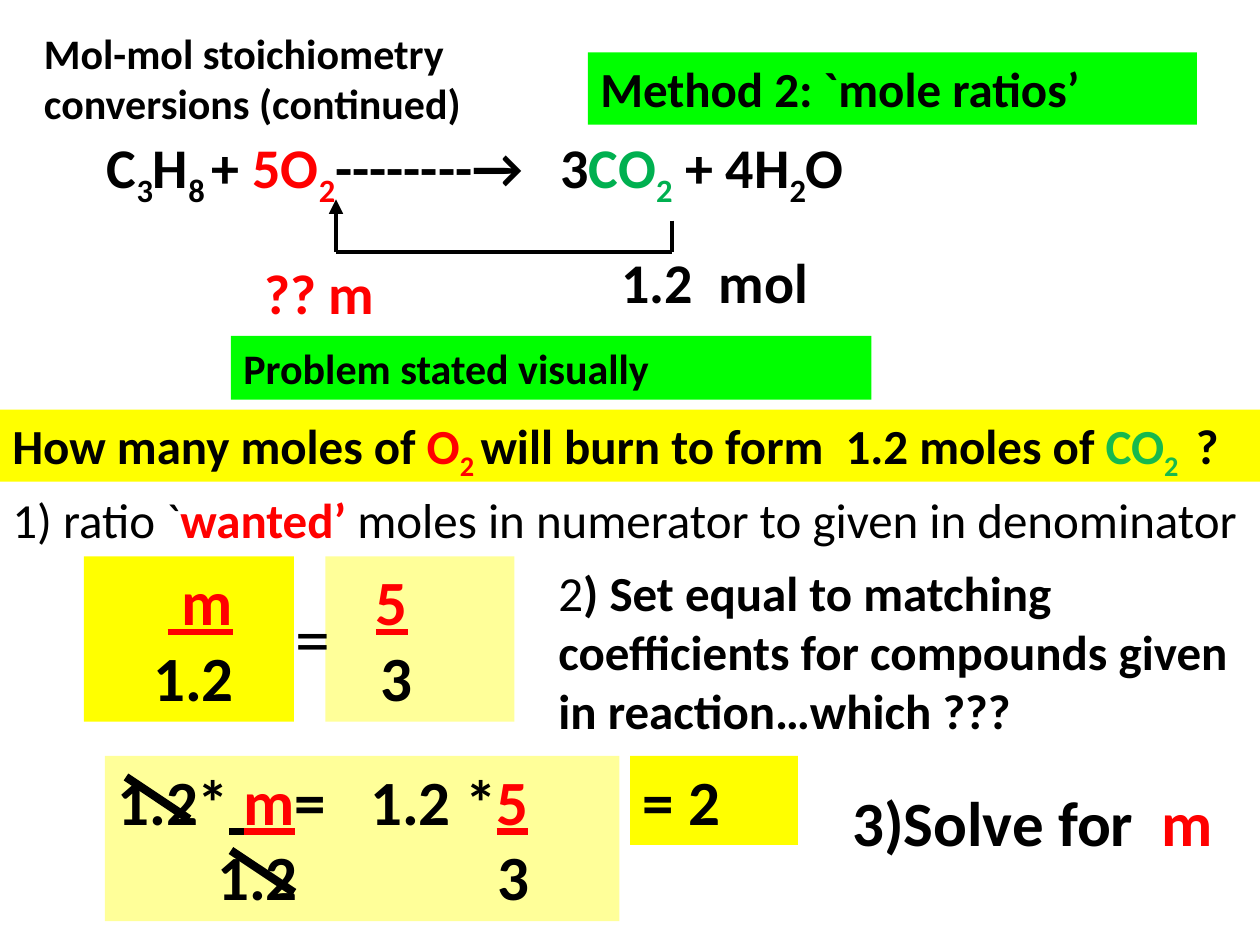
"""Build a slide on solving a mole ratio problem in three steps."""
from lxml.etree import SubElement
from pptx import Presentation
from pptx.dml.color import RGBColor
from pptx.enum.shapes import MSO_CONNECTOR, MSO_SHAPE
from pptx.enum.text import MSO_ANCHOR, PP_ALIGN
from pptx.oxml.ns import qn
from pptx.util import Pt

HUES = {
    "black": "000000", "red": "FF0000", "green": "00B050", "mint": "17B94D",
    "lime": "00FF00", "yellow": "FFFF00", "cream": "FFFF99",
}

deck = Presentation()
deck.slide_width, deck.slide_height = Pt(720), Pt(540)
slide = deck.slides.add_slide(deck.slide_layouts[6])


def add_box(left, top, wide, high, fill, size, *paras):
    """Add a text block; each paragraph is (tab stops, (text, marks), ...)."""
    area = [Pt(n) for n in (left, top, wide, high)]
    if fill:
        box = slide.shapes.add_shape(MSO_SHAPE.RECTANGLE, *area)
        box.shadow.inherit = False
        box.fill.solid()
        box.fill.fore_color.rgb = RGBColor.from_string(HUES[fill])
        box.line.fill.background()
    else:
        box = slide.shapes.add_textbox(*area)
    frame = box.text_frame
    frame.word_wrap = True
    frame.vertical_anchor = MSO_ANCHOR.TOP
    for num, (stops, *runs) in enumerate(paras):
        para = frame.add_paragraph() if num else frame.paragraphs[0]
        para.alignment = PP_ALIGN.LEFT
        if stops:
            tabs = SubElement(para._p.get_or_add_pPr(), qn("a:tabLst"))
            for stop in stops:
                SubElement(tabs, qn("a:tab"), pos=str(Pt(stop)), algn="l")
        for text, marks in runs:
            run = para.add_run()
            run.text = text
            font = run.font
            font.name, font.size = "Calibri", Pt(size)
            marks = marks.split()
            font.bold = "thin" not in marks
            font.underline = "under" in marks
            hue = next((m for m in marks if m in HUES), "black")
            font.color.rgb = RGBColor.from_string(HUES[hue])
            if "sub" in marks:
                font._element.set("baseline", "-25000")


def add_line(start, end, width, head=False):
    """Draw a black line, with an arrowhead at its start if asked."""
    ends = [Pt(n) for n in (*start, *end)]
    line = slide.shapes.add_connector(MSO_CONNECTOR.STRAIGHT, *ends)
    line.line.width = Pt(width)
    line.line.color.rgb = RGBColor.from_string(HUES["black"])
    if head:
        SubElement(line.line._get_or_add_ln(), qn("a:headEnd"), type="triangle")
    SubElement(line._element.spPr, qn("a:effectLst"))


add_box(18, 12, 276, 65.4, None, 24,
        ((), ("Mol-mol stoichiometry conversions (continued)", "")))
add_box(336, 30, 348, 41.2, "lime", 28, ((), ("Method 2: `mole ratios’", "")))
add_box(54, 72, 606, 46, None, 32,
        ((), ("C", ""), ("3", "sub"), ("H", ""), ("8 ", "sub"), ("+ ", ""),
         ("5O", "red"), ("2", "red sub"), ("--------→ \t 3", ""),
         ("CO", "green"), ("2", "green sub"), (" + 4H", ""), ("2", "sub"),
         ("O", "")))
add_box(348, 138, 132, 46, None, 32, ((), ("1.2  mol", "")))
add_box(144, 144, 96, 46, None, 32, ((), ("?? m", "red")))
add_box(132, 192, 366, 36.4, "lime", 24, ((), ("Problem stated visually", "")))
add_box(0, 234, 720, 41.2, "yellow", 28,
        ((), ("How many moles of ", ""), ("O", "red"), ("2 ", "red sub"),
         ("will burn to form  1.2 moles of ", ""), ("CO", "mint"),
         ("2 ", "mint sub"), (" ?", "")))

add_box(0, 276, 720, 41.2, None, 28,
        ((), ("1) ratio `", "thin"), ("wanted’ ", "red"),
         ("moles in numerator to given in denominator", "thin")))
add_box(48, 318, 120, 94.4, "yellow", 36,
        ((40.7,), ("\t", ""), (" m", "red under")),
        ((32.5,), ("\t1.2", "")))
add_box(186, 318, 108, 94.4, "cream", 36,
        ((21.7,), ("\t", ""), ("5", "red under")),
        ((24.4,), ("\t3", "")))
add_box(162, 336, 36, 55.6, None, 40, ((), ("=", "thin")))
add_box(312, 318, 408, 109, None, 28,
        ((), ("2", "thin"), (") Set equal to matching coefficients for "
                             "compounds given in reaction…which ???", "")))

add_box(60, 432, 294, 94.4, "cream", 36,
        ((144.5,), ("1.2*", ""), (" ", "under"), ("m", "red under"),
         ("=\t1.2 *", ""), ("5", "red under")),
        ((57, 217), ("\t1.2\t3", "")))
add_box(360, 432, 96, 50.9, "yellow", 36, ((), ("= 2", "")))
add_box(480, 444, 240, 50.9, None, 36,
        ((), ("3)Solve for  ", ""), ("m", "red")))

add_line((192, 114), (192, 144), 2.75, head=True)
add_line((384, 126), (384, 144), 2.5)
add_line((384, 144), (192, 144), 2.75)
for left, top in ((72, 444), (132, 486)):
    add_line((left, top), (left + 36, top + 24), 4.75)

deck.save("out.pptx")
